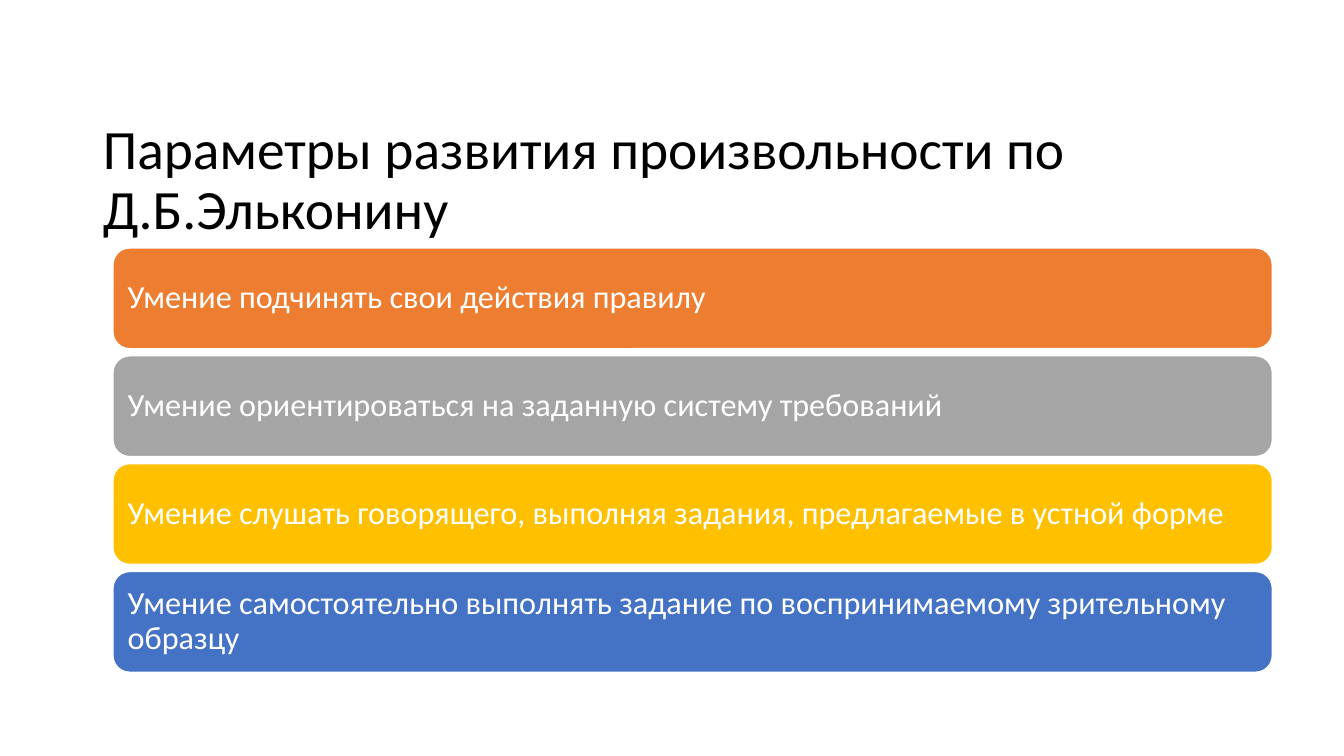
from pptx import Presentation
from pptx.dml.color import RGBColor
from pptx.enum.shapes import MSO_SHAPE
from pptx.enum.text import MSO_ANCHOR, MSO_AUTO_SIZE, PP_ALIGN
from pptx.util import Inches, Pt

ROUNDED = MSO_SHAPE.ROUNDED_RECTANGLE
MIDDLE = MSO_ANCHOR.MIDDLE
LEFT = PP_ALIGN.LEFT
NO_FIT = MSO_AUTO_SIZE.NONE

# Bar column: left edge, top, width, height and step from bar to bar
BAR_LEFT, BAR_TOP, BAR_W, BAR_H, BAR_STEP = 1.12, 2.46, 11.5, 1, 1.07

BARS = [
    ("Умение подчинять свои действия правилу", "ED7D31"),
    ("Умение ориентироваться на заданную систему требований", "A5A5A5"),
    ("Умение слушать говорящего, выполняя задания, предлагаемые в устной форме", "FFC000"),
    ("Умение самостоятельно выполнять задание по воспринимаемому зрительному образцу", "4472C4"),
]


def rgb(value):
    return RGBColor.from_string(value)


def write(shape, text, size, color, inset=0.1):
    tf = shape.text_frame
    tf.word_wrap = True
    tf.auto_size = NO_FIT
    tf.vertical_anchor = MIDDLE
    tf.margin_left = tf.margin_right = Inches(0.1)
    tf.margin_top = tf.margin_bottom = Inches(inset)
    p = tf.paragraphs[0]
    p.alignment = LEFT
    p.line_spacing = 0.9
    r = p.add_run()
    r.text = text
    r.font.name = "Calibri"
    r.font.size = Pt(size)
    r.font.color.rgb = rgb(color)


prs = Presentation()
prs.slide_width, prs.slide_height = Inches(13.33), Inches(7.5)
s = prs.slides.add_slide(prs.slide_layouts[5])

# Title
title = s.shapes.title
title.left, title.top = Inches(0.92), Inches(1.49)
title.width, title.height = Inches(11.5), Inches(0.62)
write(title, "Параметры развития произвольности по Д.Б.Эльконину", 39.6, "000000", inset=0.05)

# Stacked bars
for row, (text, color) in enumerate(BARS):
    top = BAR_TOP + row * BAR_STEP
    bar = s.shapes.add_shape(ROUNDED, Inches(BAR_LEFT), Inches(top), Inches(BAR_W), Inches(BAR_H))
    bar.shadow.inherit = False
    bar.fill.solid()
    bar.fill.fore_color.rgb = rgb(color)
    bar.line.color.rgb = rgb("FFFFFF")
    bar.line.width = Pt(1)
    write(bar, text, 23, "FFFFFF")

prs.save("out.pptx")
